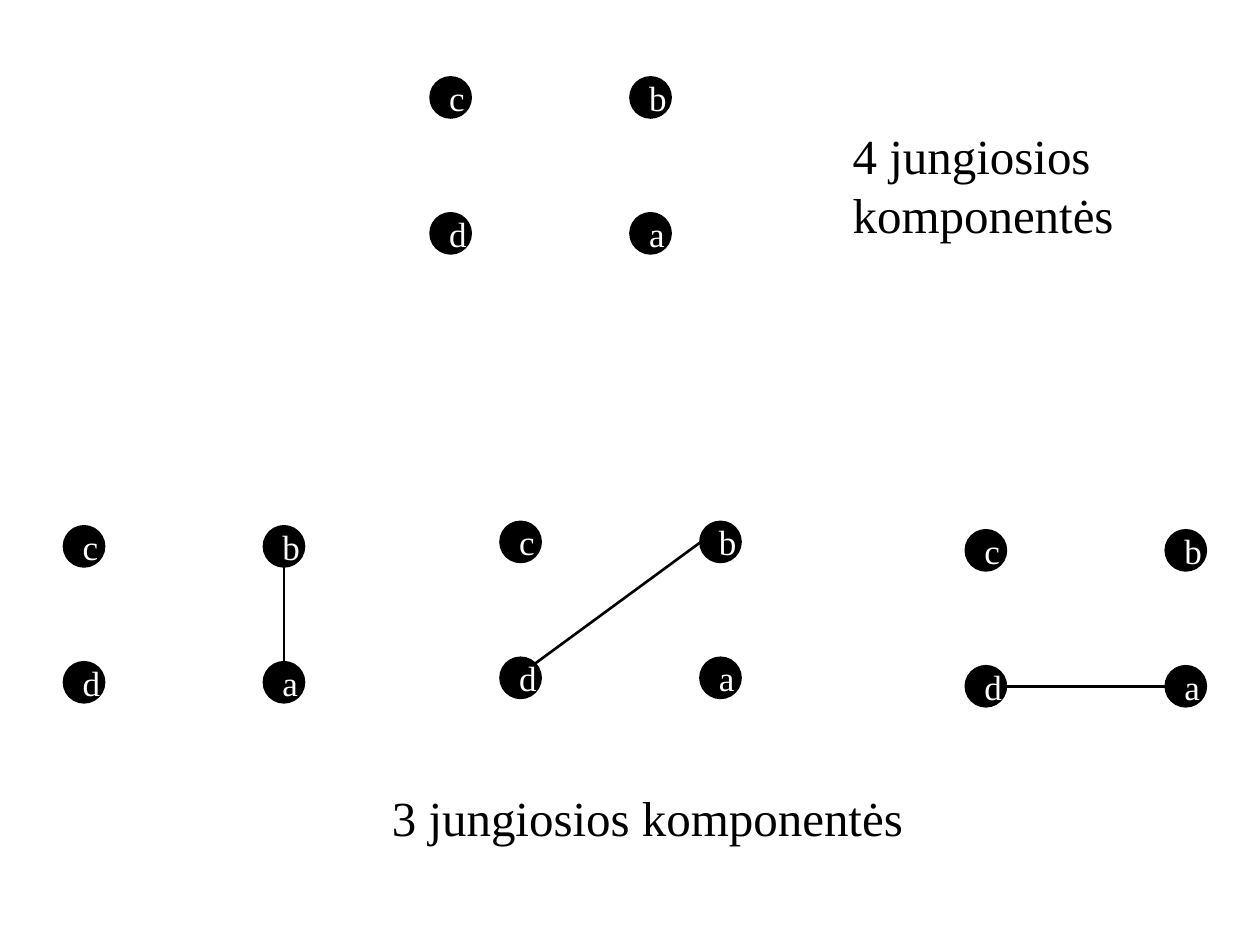
from lxml.etree import SubElement
from pptx import Presentation
from pptx.dml.color import RGBColor
from pptx.enum.shapes import MSO_CONNECTOR, MSO_SHAPE
from pptx.enum.text import MSO_ANCHOR, PP_ALIGN
from pptx.oxml.ns import qn
from pptx.util import Cm, Pt

BLACK = RGBColor(0, 0, 0)
WHITE = RGBColor(255, 255, 255)
FONT = "Times New Roman"

# Vertex: (column, row) in each graph
VERTICES = {"c": (0, 0), "b": (1, 0), "d": (0, 1), "a": (1, 1)}

# Attachment points as fractions of a vertex's diameter
TOP, BOTTOM = (0.5, 0), (0.5, 1)
LEFT, RIGHT = (0, 0.5), (1, 0.5)
TOP_RIGHT = (0.85, 0.15)

# Left and top in cm, then the edge as two (vertex, attachment) ends
GRAPHS = [
    (1.3, 10.62, (("b", BOTTOM), ("a", TOP))),
    (10.1, 10.53, (("d", TOP_RIGHT), ("b", LEFT))),
    (19.48, 10.7, (("d", RIGHT), ("a", LEFT))),
    (8.69, 1.57, None),
]

# Text, left, top, width, height in cm
CAPTIONS = [
    ("4 jungiosios komponentės", 16.94, 2.41, 7.37, 2.64),
    ("3 jungiosios komponentės", 7.65, 15.75, 11.91, 1.45),
]

DIAMETER = 0.79
COLUMN_STEP, ROW_STEP = 4.03, 2.74


def write(shape, text, size, color, align=PP_ALIGN.LEFT, anchor=MSO_ANCHOR.TOP):
    frame = shape.text_frame
    frame.word_wrap = True
    frame.vertical_anchor = anchor
    paragraph = frame.paragraphs[0]
    paragraph.alignment = align
    run = paragraph.add_run()
    run.text = text
    run.font.name = FONT
    run.font.size = Pt(size)
    run.font.color.rgb = color


def vertex_point(left, top, label, attachment=(0, 0)):
    """Return a point on a vertex's bounding box as lengths."""
    column, row = VERTICES[label]
    across, down = attachment
    return (Cm(left + column * COLUMN_STEP + across * DIAMETER),
            Cm(top + row * ROW_STEP + down * DIAMETER))


def add_graph(slide, left, top, edge):
    graph = slide.shapes.add_group_shape()
    for label in VERTICES:
        x, y = vertex_point(left, top, label)
        vertex = graph.shapes.add_shape(MSO_SHAPE.OVAL, x, y, Cm(DIAMETER), Cm(DIAMETER))
        vertex.shadow.inherit = False
        vertex.fill.solid()
        vertex.fill.fore_color.rgb = BLACK
        vertex.line.color.rgb = BLACK
        vertex.line.width = Pt(2)
        write(vertex, label, size=20, color=WHITE,
              align=PP_ALIGN.CENTER, anchor=MSO_ANCHOR.MIDDLE)
    if edge:
        start, end = (vertex_point(left, top, *edge_end) for edge_end in edge)
        line = graph.shapes.add_connector(MSO_CONNECTOR.STRAIGHT, *start, *end)
        line.line.color.rgb = BLACK
        line.line.width = Pt(1.5)
        SubElement(line._element.spPr, qn("a:effectLst"))


def main():
    presentation = Presentation()
    presentation.slide_width, presentation.slide_height = Cm(25.4), Cm(19.05)
    slide = presentation.slides.add_slide(presentation.slide_layouts[6])
    for graph in GRAPHS:
        add_graph(slide, *graph)
    for text, *box in CAPTIONS:
        caption = slide.shapes.add_textbox(*map(Cm, box))
        write(caption, text, size=28, color=BLACK)
    presentation.save("out.pptx")


if __name__ == "__main__":
    main()
